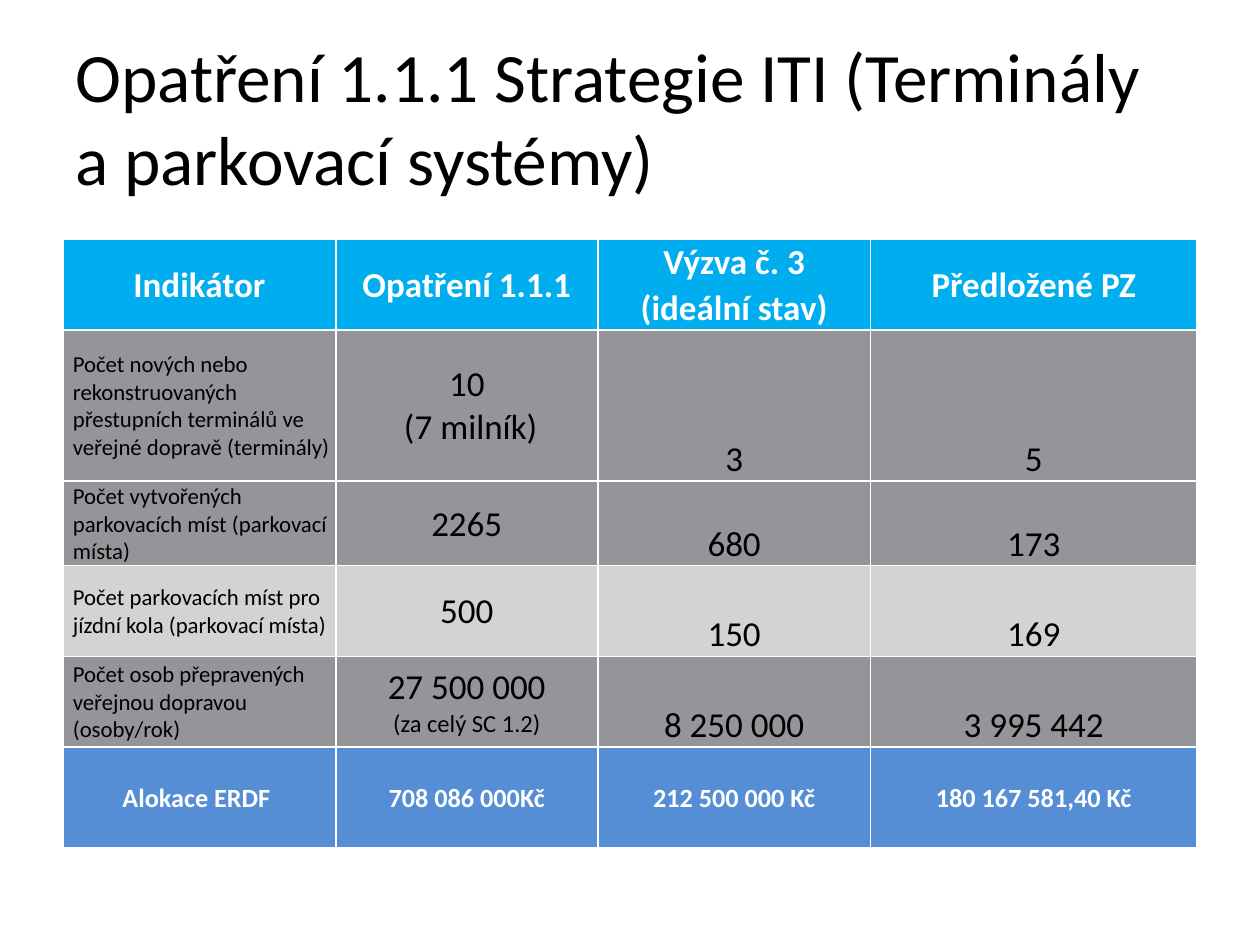
import pptx
import pptx.dml.color
import pptx.enum.text
import pptx.oxml
import pptx.oxml.ns
import pptx.util
from dataclasses import dataclass

Cm, Pt = pptx.util.Cm, pptx.util.Pt
RGB = pptx.dml.color.RGBColor.from_string
ALIGN = pptx.enum.text.PP_ALIGN
ANCHOR = pptx.enum.text.MSO_ANCHOR


@dataclass(frozen=True)
class Theme:
    font: str = "Calibri"
    black: str = "000000"
    white: str = "FFFFFF"
    header: str = "00AEEF"
    dark: str = "939598"
    light: str = "D1D3D4"
    total: str = "558ED5"
    title_pt: float = 39.6
    value_pt: int = 20
    label_pt: int = 13
    note_pt: int = 14
    total_pt: int = 15


class SlideBuilder:
    def __init__(self, slide, theme):
        self.s, self.theme = slide, theme

    def add_lines(self, tf, lines, color, align, bold=False):
        """Add (text, size) pairs, one paragraph each."""
        for i, (text, size) in enumerate(lines):
            p = tf.add_paragraph() if i else tf.paragraphs[0]
            p.alignment = align
            r = p.add_run()
            r.text = text
            r.font.name, r.font.size, r.font.bold = self.theme.font, Pt(size), bold
            r.font.color.rgb = RGB(color)

    def title(self, text, left, top, width, height):
        tf = self.s.shapes.add_textbox(left, top, width, height).text_frame
        tf.word_wrap = True
        tf.vertical_anchor = ANCHOR.MIDDLE
        self.add_lines(tf, [(text, self.theme.title_pt)], self.theme.black, ALIGN.LEFT)

    def table(self, left, top, widths, heights):
        shape = self.s.shapes.add_table(len(heights), len(widths), left, top,
                                        sum(widths), sum(heights))
        tbl = shape.table
        tbl.first_row = tbl.horz_banding = False
        for col, width in zip(tbl.columns, widths):
            col.width = width
        for row, height in zip(tbl.rows, heights):
            row.height = height
        return tbl

    def border(self, cell, side, width):
        tc_pr = cell._tc.get_or_add_tcPr()
        if width:
            fill = f'<a:solidFill><a:srgbClr val="{self.theme.white}"/></a:solidFill>'
        else:
            fill = "<a:noFill/>"
        tc_pr.append(pptx.oxml.parse_xml(
            f'<a:ln{side} {pptx.oxml.ns.nsdecls("a")} w="{int(Pt(width))}">{fill}</a:ln{side}>'))

    def cell(self, cell, lines, fill, color, top_line, bottom_line,
             align=ALIGN.CENTER, anchor=ANCHOR.MIDDLE, bold=False):
        for side, width in zip("LRTB", (1, 1, top_line, bottom_line)):
            self.border(cell, side, width)
        cell.fill.solid()
        cell.fill.fore_color.rgb = RGB(fill)
        cell.vertical_anchor = anchor
        cell.margin_left = Cm(0.2 if align == ALIGN.LEFT else 0.03)
        cell.margin_right = cell.margin_top = Cm(0.03)
        cell.margin_bottom = 0
        self.add_lines(cell.text_frame, lines, color, align, bold)


def main():
    t = Theme()
    prs = pptx.Presentation()
    prs.slide_width, prs.slide_height = Cm(25.4), Cm(19.05)
    b = SlideBuilder(prs.slides.add_slide(prs.slide_layouts[6]), t)

    # Title
    b.title("Opatření 1.1.1 Strategie ITI (Terminály a parkovací systémy)",
            Cm(1.27), Cm(0.76), Cm(22.86), Cm(3.18))

    # Table grid; rule widths run from the top edge to the bottom edge
    widths = [Cm(w) for w in (5.5, 5.28, 5.5, 6.58)]
    heights = [Cm(h) for h in (0.91, 0.91, 3.05, 1.7, 1.83, 1.83, 2.03)]
    rules = [1, 0, 1.5, 1.5, 1, 1, 1, 1]
    tbl = b.table(Cm(1.27), Cm(4.83), widths, heights)

    # Header: two rows, merged except in the third column
    headers = [["Indikátor"], ["Opatření 1.1.1"],
               ["Výzva č. 3", "(ideální stav)"], ["Předložené PZ"]]
    for col, parts in enumerate(headers):
        if len(parts) == 1:
            tbl.cell(0, col).merge(tbl.cell(1, col))
        for row, text in enumerate(parts):
            bottom = rules[2 if len(parts) == 1 else row + 1]
            b.cell(tbl.cell(row, col), [(text, t.value_pt)], t.header, t.white,
                   rules[row], bottom, bold=True)

    # Indicators: label, measure lines, call, submitted
    big = t.value_pt
    indicators = [
        ("Počet nových nebo rekonstruovaných přestupních terminálů ve veřejné dopravě (terminály)",
         [("10", big), (" (7 milník)", big)], "3", "5", t.dark),
        ("Počet vytvořených parkovacích míst (parkovací místa)",
         [("2265", big)], "680", "173", t.dark),
        ("Počet parkovacích míst pro jízdní kola (parkovací místa)",
         [("500", big)], "150", "169", t.light),
        ("Počet osob přepravených veřejnou dopravou (osoby/rok)",
         [("27 500 000", big), ("(za celý SC 1.2)", t.note_pt)],
         "8 250 000", "3 995 442", t.dark),
    ]
    for row, (label, measure, call, submitted, fill) in enumerate(indicators, 2):
        look = (fill, t.black, rules[row], rules[row + 1])
        b.cell(tbl.cell(row, 0), [(label, t.label_pt)], *look, align=ALIGN.LEFT)
        b.cell(tbl.cell(row, 1), measure, *look)
        for col, value in enumerate((call, submitted), 2):
            b.cell(tbl.cell(row, col), [(value, big)], *look, anchor=ANCHOR.BOTTOM)

    # Allocation
    totals = ["Alokace ERDF ", "708 086 000Kč", "212 500 000 Kč", "180 167 581,40 Kč"]
    for col, text in enumerate(totals):
        b.cell(tbl.cell(6, col), [(text, t.total_pt)], t.total, t.white,
               rules[6], rules[7], bold=True)

    prs.save("out.pptx")


if __name__ == "__main__":
    main()
